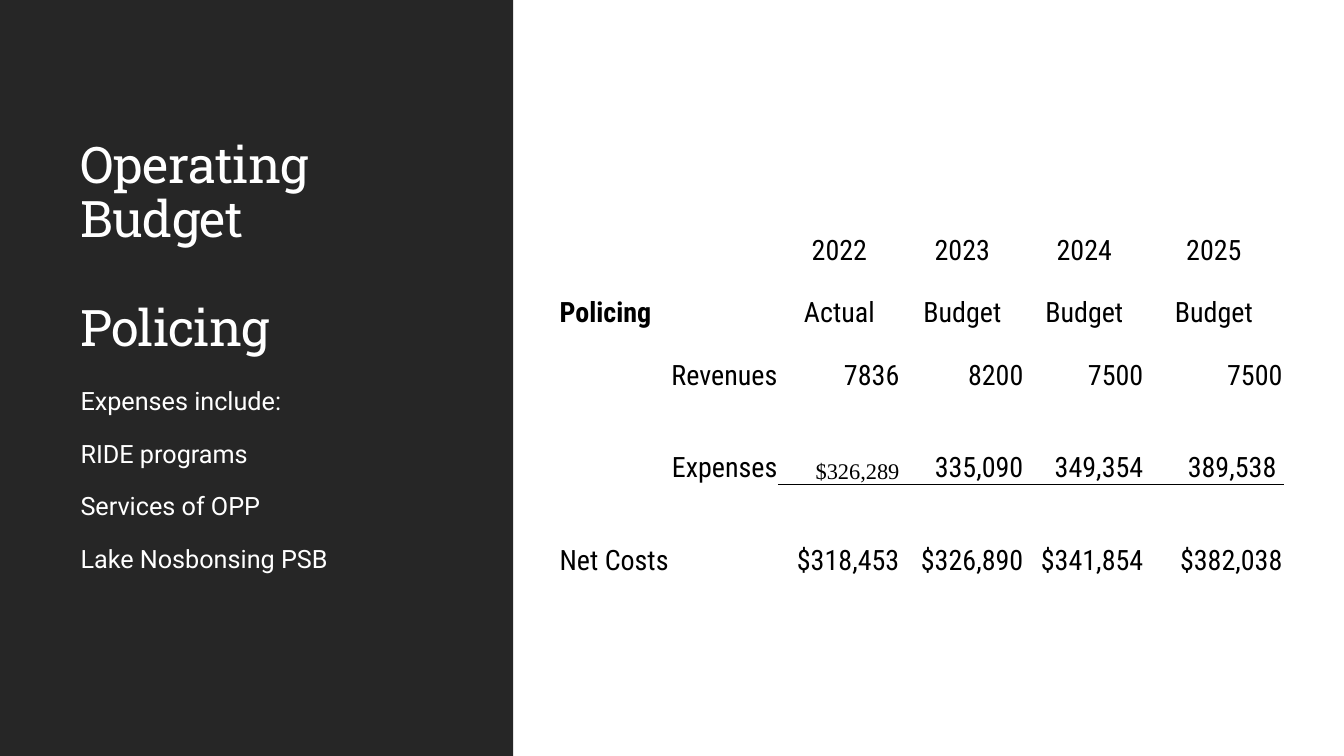
import dataclasses

import lxml.etree
import pptx
import pptx.dml.color
import pptx.enum.shapes
import pptx.enum.text
import pptx.oxml.ns
import pptx.util

ALIGN = pptx.enum.text.PP_ALIGN
ANCHOR = pptx.enum.text.MSO_ANCHOR
WIDTH, HEIGHT = 13.33, 7.5


@dataclasses.dataclass(frozen=True)
class Theme:
    panel: str = "262626"
    light: str = "FFFFFF"
    dark: str = "000000"
    title_font: str = "Roboto Slab"
    body_font: str = "Roboto"
    table_font: str = "Roboto Condensed"
    serif_font: str = "Times New Roman"
    title_size: float = 36
    body_size: float = 18
    table_size: float = 20
    small_size: float = 16
    rule_width: float = 0.5


THEME = Theme()
PANEL_WIDTH = 5.09
TEXT_LEFT, TEXT_WIDTH = 0.7, 3.85
TABLE_LEFT, TABLE_TOP = 5.54, 2
COLUMNS = (2.18, 1.21, 1.23, 1.19, 1.38)
ROWS = (0.65, 0.62, 0.62, 0.92, 0.92)
EXPENSES_ROW, NET_ROW = 3, 4

NOTES = ("Expenses include:", "RIDE programs", "Services of OPP", "Lake Nosbonsing PSB")
BUDGET = (
    ("", "2022", "2023", "2024", "2025"),
    ("Policing", "Actual", "Budget", "Budget", "Budget"),
    ("Revenues", "7836", "8200", "7500", "7500"),
    ("Expenses", "$326,289", "335,090", "349,354", "389,538"),
    ("Net Costs", "$318,453", "$326,890", "$341,854", "$382,038"),
)


def inches(*lengths):
    return [pptx.util.Inches(length) for length in lengths]


def rgb(code):
    return pptx.dml.color.RGBColor.from_string(code)


def format_runs(para, font, size, color, bold=False):
    for span in para.runs:
        span.font.name = font
        span.font.size = pptx.util.Pt(size)
        span.font.color.rgb = rgb(color)
        span.font.bold = bold


def add_panel(page):
    panel = page.shapes.add_shape(
        pptx.enum.shapes.MSO_SHAPE.RECTANGLE, *inches(0, 0, PANEL_WIDTH, HEIGHT))
    panel.shadow.inherit = False
    panel.fill.solid()
    panel.fill.fore_color.rgb = rgb(THEME.panel)
    panel.line.fill.background()
    # The panel lies behind the title placeholder.
    page.shapes._spTree.insert(2, panel._element)


def set_title(page):
    title = page.shapes.title
    title.left, title.top, title.width, title.height = inches(
        TEXT_LEFT, 1.31, TEXT_WIDTH, 2.29)
    frame = title.text_frame
    frame.text = "Operating Budget\nPolicing"
    frame.word_wrap = True
    frame.auto_size = pptx.enum.text.MSO_AUTO_SIZE.NONE
    frame.vertical_anchor = ANCHOR.BOTTOM
    for para, gap in zip(frame.paragraphs, (0, 39)):
        para.alignment = ALIGN.LEFT
        para.line_spacing = 0.9
        para.space_before = pptx.util.Pt(gap)
        format_runs(para, THEME.title_font, THEME.title_size, THEME.light)
        for span in para.runs:
            span.font._element.set("spc", "-50")


def add_notes_text(page):
    box = page.shapes.add_textbox(*inches(TEXT_LEFT, 3.74, TEXT_WIDTH, 3.35))
    frame = box.text_frame
    frame.word_wrap = True
    frame.text = "\n".join(NOTES)
    for para in frame.paragraphs:
        para.line_spacing = 1.1
        para.space_before = pptx.util.Pt(12)
        para.space_after = pptx.util.Pt(2)
        format_runs(para, THEME.body_font, THEME.body_size, THEME.light)


def add_rule(cell, side):
    """Draw a thin line on one side of a cell: lnT or lnB."""
    name = pptx.oxml.ns.qn
    line = lxml.etree.Element(name("a:" + side), w=str(pptx.util.Pt(THEME.rule_width)))
    fill = lxml.etree.SubElement(line, name("a:solidFill"))
    lxml.etree.SubElement(fill, name("a:srgbClr"), val=THEME.dark)
    cell._tc.get_or_add_tcPr().insert(0, line)


def cell_alignment(row, column):
    if column == 0:
        return ALIGN.RIGHT if row in (2, EXPENSES_ROW) else ALIGN.LEFT
    return ALIGN.CENTER if row < 2 else ALIGN.RIGHT


def fill_cell(cell, row, column):
    cell.fill.background()
    cell.vertical_anchor = ANCHOR.BOTTOM
    right = 0.07 if (row, column) == (EXPENSES_ROW, 4) else 0.01
    cell.margin_left, cell.margin_top, cell.margin_right, cell.margin_bottom = inches(
        0.01, 0.01, right, 0)
    cell.text = BUDGET[row][column]
    para = cell.text_frame.paragraphs[0]
    para.alignment = cell_alignment(row, column)
    font, size = THEME.table_font, THEME.table_size
    if (row, column) == (EXPENSES_ROW, 1):
        font, size = THEME.serif_font, THEME.small_size
    format_runs(para, font, size, THEME.dark, bold=(row, column) == (1, 0))
    if column and row in (EXPENSES_ROW, NET_ROW):
        add_rule(cell, "lnB" if row == EXPENSES_ROW else "lnT")


def add_budget_table(page):
    table = page.shapes.add_table(
        len(ROWS), len(COLUMNS),
        *inches(TABLE_LEFT, TABLE_TOP, sum(COLUMNS), sum(ROWS))).table
    table.first_row = table.horz_banding = False
    for column, width in zip(table.columns, inches(*COLUMNS)):
        column.width = width
    for row, height in zip(table.rows, inches(*ROWS)):
        row.height = height
    for row in range(len(ROWS)):
        for column in range(len(COLUMNS)):
            fill_cell(table.cell(row, column), row, column)


def main():
    deck = pptx.Presentation()
    deck.slide_width, deck.slide_height = inches(WIDTH, HEIGHT)
    page = deck.slides.add_slide(deck.slide_layouts.get_by_name("Title Only"))
    add_panel(page)
    set_title(page)
    add_notes_text(page)
    add_budget_table(page)
    deck.save("out.pptx")


if __name__ == "__main__":
    main()
